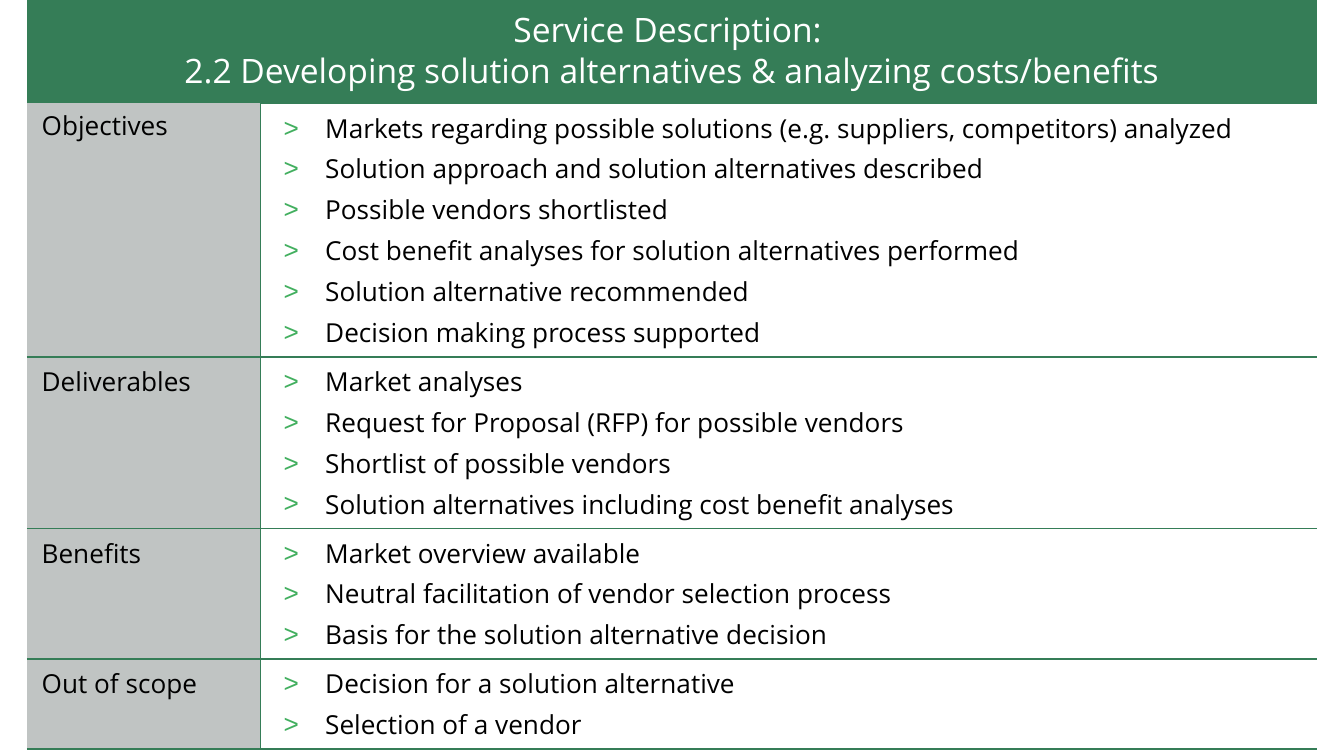
from dataclasses import dataclass

from lxml.etree import SubElement
from pptx import Presentation
from pptx.dml.color import RGBColor
from pptx.enum.text import MSO_ANCHOR, PP_ALIGN
from pptx.oxml.ns import qn
from pptx.util import Inches, Pt


@dataclass(frozen=True)
class Theme:
    font: str = "Open Sans"
    bullet_font: str = "Arial"
    title_size: int = 18
    body_size: int = 14
    green: str = "357D57"
    bullet: str = "42AF5F"
    grey: str = "C0C4C3"
    white: str = "FFFFFF"
    black: str = "000000"
    plain_table: str = "{2D5ABB26-0587-4C30-8999-92F81FD0307C}"


@dataclass(frozen=True)
class Section:
    label: str
    height: float
    items: tuple[str, ...]
    spacing: float = 1.0


THEME = Theme()
TITLE = ("Service Description: \v"
         "2.2 Developing solution alternatives & analyzing costs/benefits")
TITLE_HEIGHT = 0.79
COLUMNS = (1.74, 7.86)
SECTIONS = (
    Section("Objectives", 1.78, (
        "Markets regarding possible solutions (e.g. suppliers, competitors) analyzed",
        "Solution approach and solution alternatives described",
        "Possible vendors shortlisted",
        "Cost benefit analyses for solution alternatives performed",
        "Solution alternative recommended",
        "Decision making process supported",
    ), spacing=0.9),
    Section("Deliverables", 1.21, (
        "Market analyses",
        "Request for Proposal (RFP) for possible vendors",
        "Shortlist of possible vendors",
        "Solution alternatives including cost benefit analyses",
    )),
    Section("Benefits", 0.92, (
        "Market overview available",
        "Neutral facilitation of vendor selection process",
        "Basis for the solution alternative decision",
    )),
    Section("Out of scope", 0.63, (
        "Decision for a solution alternative",
        "Selection of a vendor",
    )),
)


def add_bullet(p) -> None:
    pPr = p._p.get_or_add_pPr()
    pPr.set("marL", str(Inches(0.37)))
    pPr.set("indent", str(Inches(-0.31)))
    color = SubElement(pPr, qn("a:buClr"))
    SubElement(color, qn("a:srgbClr"), val=THEME.bullet)
    SubElement(pPr, qn("a:buFont"), typeface=THEME.bullet_font)
    SubElement(pPr, qn("a:buChar"), char=">")


def write(p, text: str, *, size: int = THEME.body_size, color: str = THEME.black,
          align=PP_ALIGN.LEFT, spacing: float = 1.0, before: float = 0,
          bullet: bool = False) -> None:
    if bullet:
        add_bullet(p)
    p.text = text
    p.alignment = align
    p.line_spacing = spacing
    p.space_before = Pt(before)
    for r in p.runs:
        r.font.name = THEME.font
        r.font.size = Pt(size)
        r.font.color.rgb = RGBColor.from_string(color)


def style_cell(cell, borders: dict[str, str], fill: str | None = None) -> None:
    cell.margin_left = cell.margin_right = Inches(0.11)
    cell.margin_top = cell.margin_bottom = Inches(0.05)
    tcPr = cell._tc.get_or_add_tcPr()
    # Border elements come before the fill, in the order L, R, T, B
    for side in "LRTB":
        if side in borders:
            line = SubElement(tcPr, qn(f"a:ln{side}"), w=str(Pt(1)))
            solid = SubElement(line, qn("a:solidFill"))
            SubElement(solid, qn("a:srgbClr"), val=borders[side])
    if fill:
        cell.fill.solid()
        cell.fill.fore_color.rgb = RGBColor.from_string(fill)
    else:
        cell.fill.background()


def fill_section(table, row: int, section: Section) -> None:
    label, body = table.cell(row, 0), table.cell(row, 1)
    top = THEME.grey if row == 1 else THEME.green
    style_cell(label, {"R": THEME.green, "T": top, "B": THEME.green}, THEME.grey)
    write(label.text_frame.paragraphs[0], section.label, spacing=section.spacing)

    style_cell(body, dict.fromkeys("LTB", THEME.green))
    tf = body.text_frame
    for i, item in enumerate(section.items):
        p = tf.add_paragraph() if i else tf.paragraphs[0]
        write(p, item, bullet=True, before=0.2 * THEME.body_size if i else 0)


def main() -> None:
    # Widescreen 16:9 slide
    prs = Presentation()
    prs.slide_width = Inches(10)
    prs.slide_height = Inches(10 * 9 / 16)
    s = prs.slides.add_slide(prs.slide_layouts[6])

    # Table grid
    heights = [TITLE_HEIGHT] + [section.height for section in SECTIONS]
    table = s.shapes.add_table(
        len(heights), len(COLUMNS), Inches(0.2), Inches(-0.02),
        Inches(sum(COLUMNS)), Inches(sum(heights))).table
    table.horz_banding = table.first_row = False
    table._tbl.tblPr.find(qn("a:tableStyleId")).text = THEME.plain_table
    for column, width in zip(table.columns, COLUMNS):
        column.width = Inches(width)
    for row, height in zip(table.rows, heights):
        row.height = Inches(height)

    # Title row
    title = table.cell(0, 0)
    title.merge(table.cell(0, 1))
    style_cell(title, {"B": THEME.grey}, THEME.green)
    title.vertical_anchor = MSO_ANCHOR.MIDDLE
    write(title.text_frame.paragraphs[0], TITLE, size=THEME.title_size,
          color=THEME.white, align=PP_ALIGN.CENTER, spacing=0.9)

    # Section rows
    for row, section in enumerate(SECTIONS, start=1):
        fill_section(table, row, section)

    prs.save("out.pptx")


if __name__ == "__main__":
    main()
